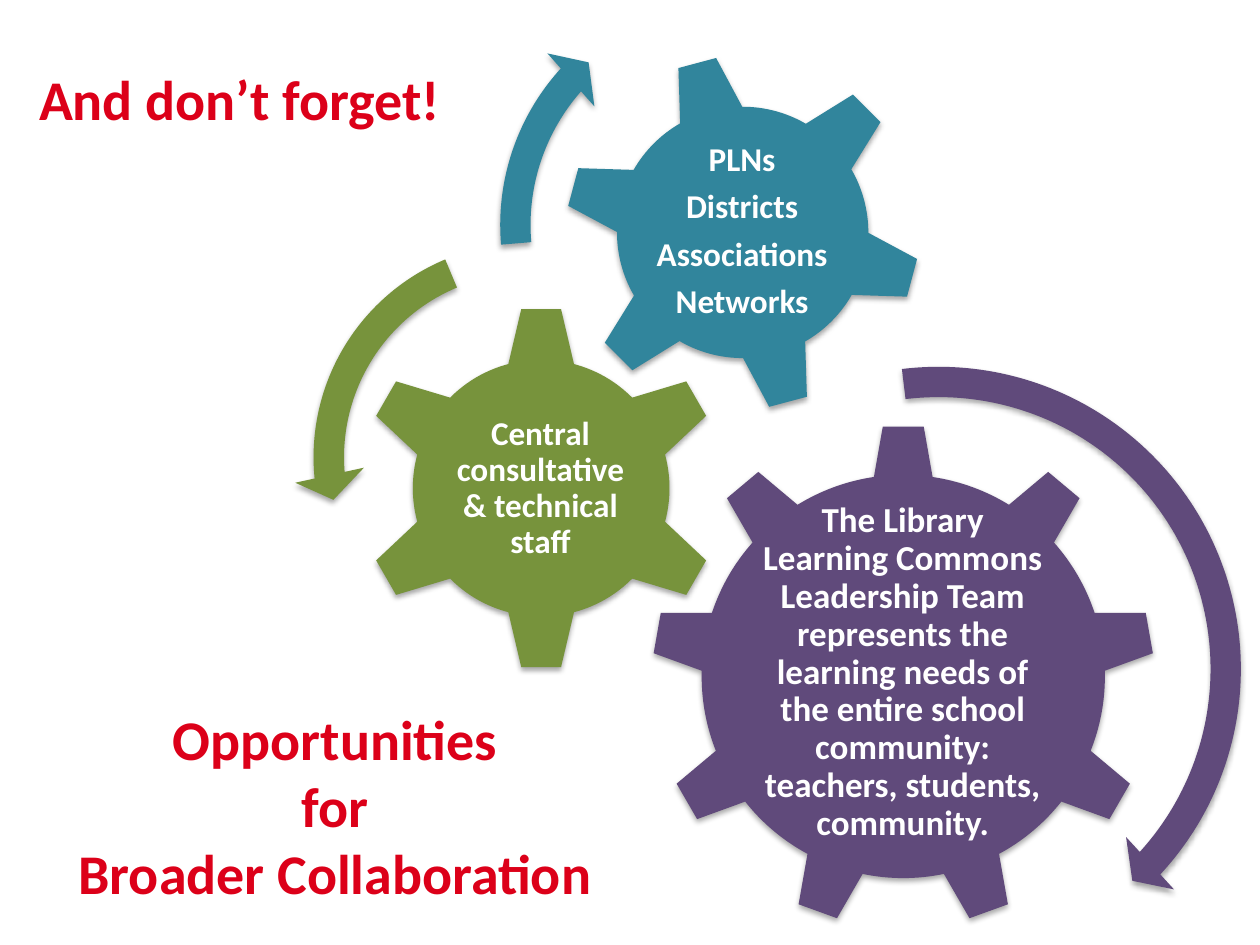
import pptx
import pptx.util
from lxml import etree
from pptx.dml.color import RGBColor
from pptx.enum.shapes import MSO_SHAPE
from pptx.enum.text import MSO_ANCHOR, MSO_AUTO_SIZE, PP_ALIGN
from pptx.oxml import parse_xml

Pt = pptx.util.Pt

# Content
FONT, RED, WHITE = "Calibri", "DC0019", "FFFFFF"
PURPLE, GREEN, TEAL = "604A7B", "77933C", "31859C"
TITLE = "And don’t forget!"
MESSAGE = ["Opportunities", "for", "Broader Collaboration"]

# Gears and arrows: left, top, side; labels: left, top, width, height
GEARS = [
    dict(kind=MSO_SHAPE.GEAR_9, color=PURPLE, square=(372.2, 242.6, 288), turn=0,
         label=(429.8, 310.3, 172.1, 148.3), size=20,
         lines=["The Library Learning Commons Leadership Team represents the "
                "learning needs of the entire school community: teachers, "
                "students, community."]),
    dict(kind=MSO_SHAPE.GEAR_6, color=GREEN, square=(204.5, 174.2, 209.5), turn=0,
         label=(257, 227.5, 103.7, 103.7), size=19,
         lines=["Central consultative & technical staff"]),
    dict(kind=MSO_SHAPE.GEAR_6, color=TEAL, square=(321.8, 30.2, 205.2), turn=345,
         label=(366.5, 74.9, 115.2, 115.2), size=19,
         lines=["PLNs", "Districts", "Associations", "Networks"]),
]
ARROWS = [
    (MSO_SHAPE.CIRCULAR_ARROW, PURPLE, (352.1, 198, 368.6),
     (0.047, 2.99, 25.546, 157.808, 0.055)),
    (MSO_SHAPE.LEFT_CIRCULAR_ARROW, GREEN, (167.8, 127.4, 267.8),
     (0.065, 4.3, 104.891, 148.378, 0.075)),
    (MSO_SHAPE.CIRCULAR_ARROW, TEAL, (274.3, -15.8, 288.7),
     (0.06, 3.941, 133.138, 105.082, 0.07)),
]

SHADOW = (
    '<a:effectLst xmlns:a="http://schemas.openxmlformats.org/drawingml/2006/main">'
    '<a:outerShdw blurRad="40000" dist="23000" dir="5400000" rotWithShape="0">'
    '<a:srgbClr val="000000"><a:alpha val="35000"/></a:srgbClr>'
    '</a:outerShdw></a:effectLst>'
)


def rgb(color):
    return RGBColor.from_string(color)


def add_solid(slide, kind, square, color):
    left, top, side = square
    shape = slide.shapes.add_shape(kind, Pt(left), Pt(top), Pt(side), Pt(side))
    shape.fill.solid()
    shape.fill.fore_color.rgb = rgb(color)
    shape.line.fill.background()
    shape._element.spPr.append(parse_xml(SHADOW))
    return shape


def write_lines(frame, lines, size, color, align, spacing=1, after=0):
    for index, line in enumerate(lines):
        paragraph = frame.add_paragraph() if index else frame.paragraphs[0]
        paragraph.alignment = align
        paragraph.line_spacing = spacing
        paragraph.space_before = Pt(0)
        paragraph.space_after = Pt(after)
        run = paragraph.add_run()
        run.text = line
        run.font.name = FONT
        run.font.size = Pt(size)
        run.font.bold = True
        run.font.color.rgb = rgb(color)


def add_text(slide, box, lines, size, color, **spacing):
    frame = slide.shapes.add_textbox(*map(Pt, box)).text_frame
    frame.word_wrap = True
    write_lines(frame, lines, size, color, PP_ALIGN.CENTER, **spacing)
    return frame


def main():
    presentation = pptx.Presentation()
    presentation.slide_width, presentation.slide_height = Pt(720), Pt(540)
    slide = presentation.slides.add_slide(presentation.slide_layouts[5])

    # Title
    title = slide.shapes.title
    title.left, title.top, title.width, title.height = map(Pt, (15.1, 33.1, 247.7, 46.1))
    frame = title.text_frame
    frame.word_wrap = False
    frame.auto_size = MSO_AUTO_SIZE.SHAPE_TO_FIT_TEXT
    frame.vertical_anchor = MSO_ANCHOR.TOP
    write_lines(frame, [TITLE], 32, RED, PP_ALIGN.LEFT)

    # Gears with their labels
    for gear in GEARS:
        shape = add_solid(slide, gear["kind"], gear["square"], gear["color"])
        shape.rotation = gear["turn"]
        frame = add_text(slide, gear["label"], gear["lines"], gear["size"], WHITE,
                         spacing=0.9, after=0.35 * gear["size"])
        frame.vertical_anchor = MSO_ANCHOR.MIDDLE
        frame.margin_left = frame.margin_right = Pt(2)
        frame.margin_top = frame.margin_bottom = Pt(2)

    # Turning arrows
    for kind, color, square, adjustments in ARROWS:
        arrow = add_solid(slide, kind, square, color)
        for index, value in enumerate(adjustments):
            arrow.adjustments[index] = value

    # Closing message
    frame = add_text(slide, (24.5, 398.9, 334.1, 123.8), MESSAGE, 32, RED)
    frame.auto_size = MSO_AUTO_SIZE.SHAPE_TO_FIT_TEXT

    presentation.save("out.pptx")


if __name__ == "__main__":
    main()
